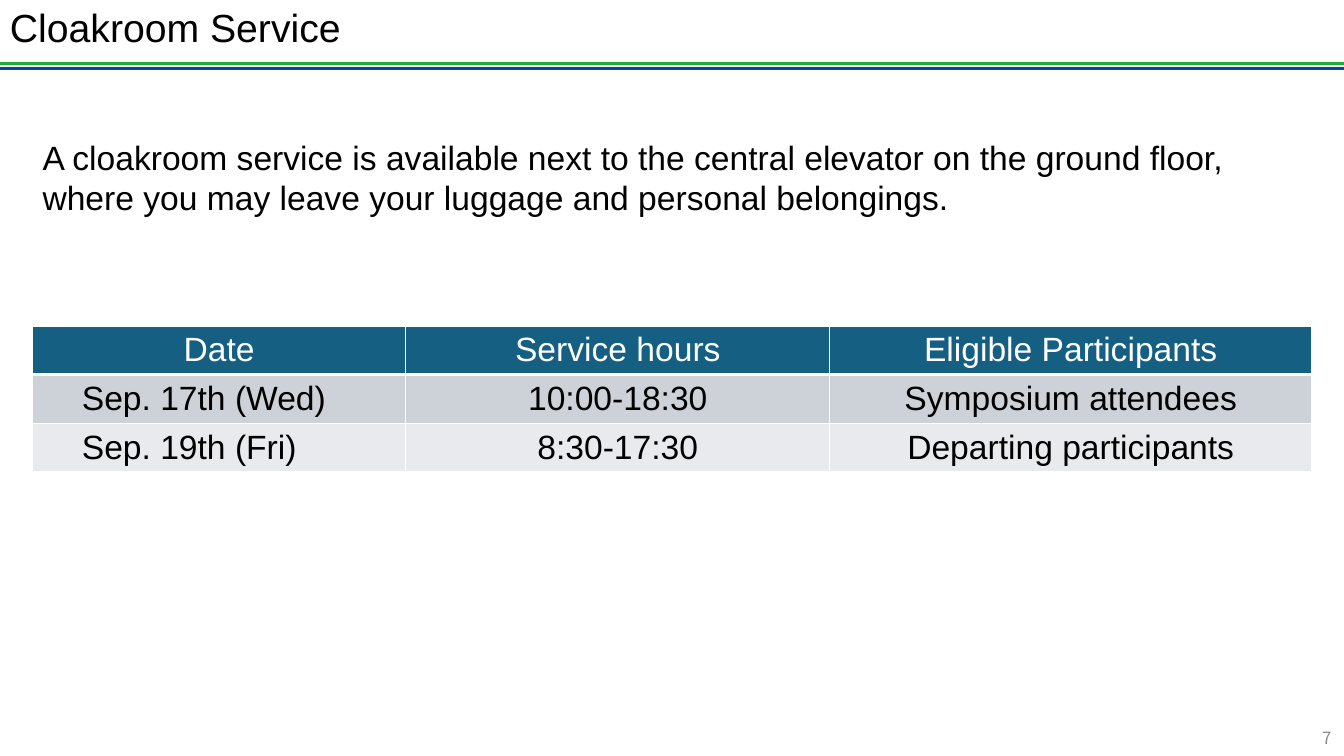
from lxml import etree
from pptx import Presentation
from pptx.dml.color import RGBColor
from pptx.enum.shapes import MSO_CONNECTOR
from pptx.enum.text import MSO_ANCHOR, PP_ALIGN
from pptx.oxml.ns import qn
from pptx.util import Pt

# Content
TITLE = "Cloakroom Service"
INTRO = ("A cloakroom service is available next to the central elevator on the "
         "ground floor, where you may leave your luggage and personal belongings.")
ROWS = [
    ("Date", "Service hours", "Eligible Participants"),
    ("Sep. 17th (Wed)", "10:00-18:30", "Symposium attendees"),
    ("Sep. 19th (Fri)", "8:30-17:30", "Departing participants"),
]
PAGE = "7"

THEME = {
    "font": "Arial", "page_font": "Noto Sans CJK JP",
    "title": 28, "body": 24, "page": 12,
    "text": "000000", "white": "FFFFFF", "muted": "8C8C8C",
    "rules": ("21AB38", "00469C"),
    "rows": ("156082", "CCD2D8", "E8EAED"),
}

# Layout in points
WIDTH, HEIGHT = 960, 540
LEFT, BODY_W = 23.3, 913.5
RULE_TOP, RULE_GAP = 45.4, 3.6
TABLE_TOP, ROW_H, CELL_PAD = 232.8, 33.6, 3
COLS = (266.5, 303, 344)
DATE_INDENT = 28


def style(p, size, color, font=THEME["font"], align=PP_ALIGN.LEFT):
    p.alignment = align
    for r in p.runs:
        r.font.name, r.font.size = font, Pt(size)
        r.font.color.rgb = RGBColor.from_string(color)


def add_text(s, text, box, size, color, anchor=MSO_ANCHOR.MIDDLE, **look):
    tf = s.shapes.add_textbox(*map(Pt, box)).text_frame
    tf.word_wrap = True
    tf.vertical_anchor = anchor
    tf.text = text
    style(tf.paragraphs[0], size, color, **look)
    return tf


def add_borders(cell, bottom):
    tc_pr = cell._tc.get_or_add_tcPr()
    for i, (side, width) in enumerate(zip("LRTB", (1, 1, 1, bottom))):
        ln = etree.Element(qn(f"a:ln{side}"), w=str(Pt(width)))
        fill = etree.SubElement(ln, qn("a:solidFill"))
        etree.SubElement(fill, qn("a:srgbClr"), val=THEME["white"])
        tc_pr.insert(i, ln)


def add_schedule(s):
    table = s.shapes.add_table(len(ROWS), len(COLS), Pt(LEFT), Pt(TABLE_TOP),
                               Pt(sum(COLS)), Pt(ROW_H * len(ROWS))).table
    for col, width in zip(table.columns, COLS):
        col.width = Pt(width)
    for i, (row, fill) in enumerate(zip(ROWS, THEME["rows"])):
        table.rows[i].height = Pt(ROW_H)
        for j, text in enumerate(row):
            cell = table.cell(i, j)
            cell.fill.solid()
            cell.fill.fore_color.rgb = RGBColor.from_string(fill)
            cell.vertical_anchor = MSO_ANCHOR.MIDDLE
            cell.margin_top = cell.margin_bottom = Pt(CELL_PAD)
            add_borders(cell, 3 if i == 0 else 1)
            p = cell.text_frame.paragraphs[0]
            p.text = text
            is_date = i > 0 and j == 0
            style(p, THEME["body"], THEME["text"] if i else THEME["white"],
                  align=PP_ALIGN.LEFT if is_date else PP_ALIGN.CENTER)
            if is_date:
                p._p.get_or_add_pPr().set("marL", str(Pt(DATE_INDENT)))


def main():
    prs = Presentation()
    prs.slide_width, prs.slide_height = Pt(WIDTH), Pt(HEIGHT)
    s = prs.slides.add_slide(prs.slide_layouts[6])

    # Double rule under the title
    for i, color in enumerate(THEME["rules"]):
        y = Pt(RULE_TOP + i * RULE_GAP)
        rule = s.shapes.add_connector(MSO_CONNECTOR.STRAIGHT, 0, y, Pt(WIDTH), y)
        rule.line.width = Pt(2.25)
        rule.line.color.rgb = RGBColor.from_string(color)
        etree.SubElement(rule._element.spPr, qn("a:effectLst"))

    # Title and introduction
    title = add_text(s, TITLE, (0, 0, 791, 42.5), THEME["title"], THEME["text"])
    title.paragraphs[0].line_spacing = 0.9
    add_text(s, INTRO, (LEFT, 94.3, BODY_W, 65.5), THEME["body"], THEME["text"],
             anchor=MSO_ANCHOR.TOP)

    # Service hours
    add_schedule(s)

    # Page number
    page = add_text(s, PAGE, (906.5, 520.5, 44.6, 13), THEME["page"], THEME["muted"],
                    font=THEME["page_font"], align=PP_ALIGN.RIGHT)
    page.margin_left = page.margin_right = page.margin_top = page.margin_bottom = 0

    prs.save("out.pptx")


if __name__ == "__main__":
    main()
